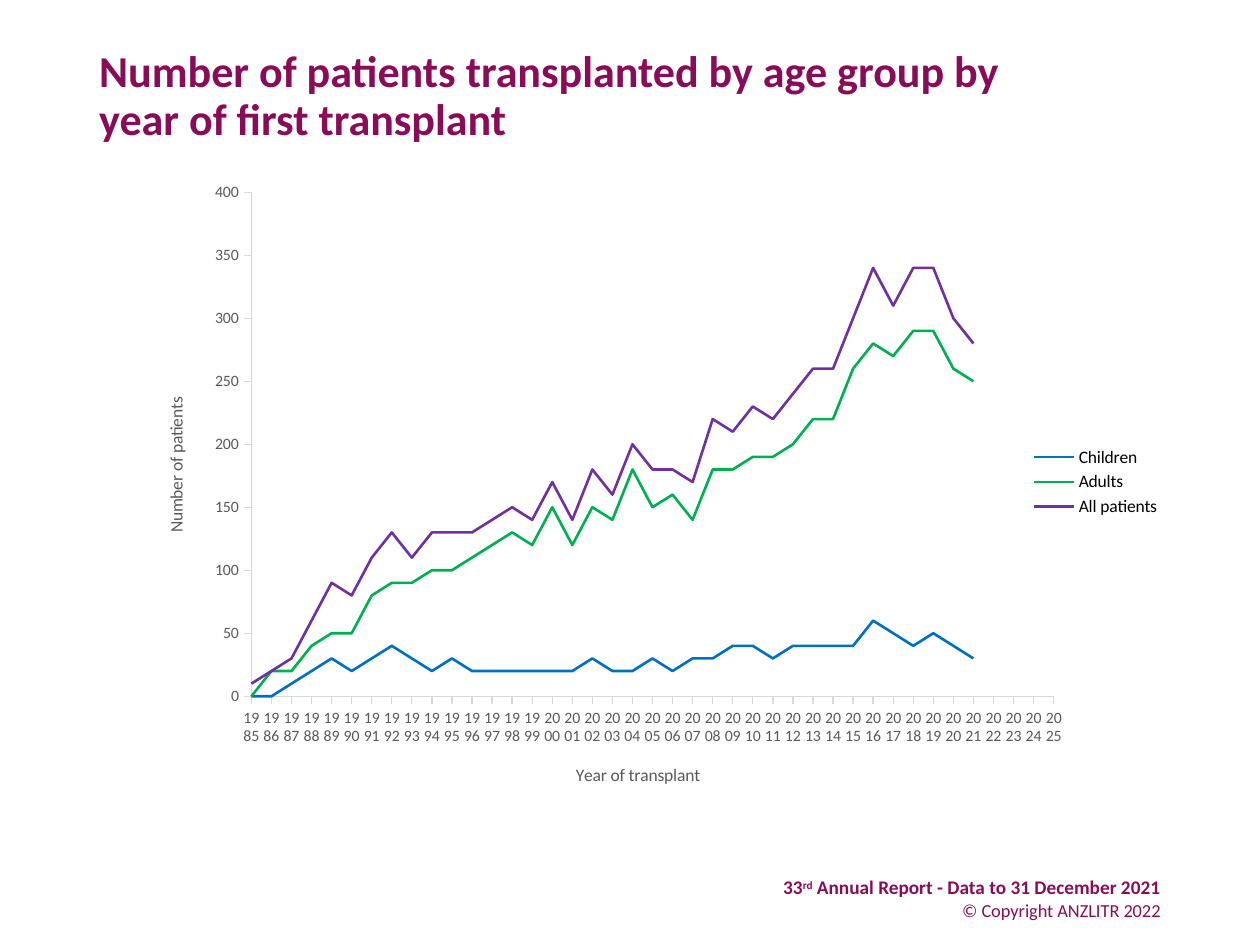
from dataclasses import dataclass
from typing import NamedTuple, Optional

from lxml.etree import SubElement
from pptx import Presentation
from pptx.chart.data import CategoryChartData
from pptx.dml.color import RGBColor as RGB
from pptx.enum.chart import XL_CHART_TYPE as ChartType
from pptx.enum.chart import XL_LEGEND_POSITION as LegendPos
from pptx.enum.chart import XL_TICK_MARK as Tick
from pptx.enum.text import MSO_ANCHOR as Anchor
from pptx.enum.text import PP_ALIGN as Align
from pptx.oxml.ns import qn
from pptx.util import Cm, Pt


@dataclass(frozen=True)
class Theme:
    font: str = "Calibri"
    plum: RGB = RGB.from_string("890C58")
    grey: RGB = RGB.from_string("595959")
    rule: RGB = RGB.from_string("D9D9D9")
    black: RGB = RGB.from_string("000000")
    title: float = 25.2
    report: float = 11
    copyright: float = 10.5
    label: float = 10
    tick: float = 9
    axis_width: float = 0.75
    line_width: float = 1.5


class Box(NamedTuple):
    left: float
    top: float
    width: float
    height: float

    def lengths(self) -> list:
        return [Cm(v) for v in self]


class Run(NamedTuple):
    text: str
    size: float
    bold: bool = False
    baseline: int = 0


class Series(NamedTuple):
    name: str
    color: str
    values: list


THEME = Theme()
YEARS = range(1985, 2026)
SERIES = [
    Series("Children", "0070C0", [
        0, 0, 10, 20, 30, 20, 30, 40, 30, 20, 30, 20, 20, 20, 20, 20, 20, 30, 20,
        20, 30, 20, 30, 30, 40, 40, 30, 40, 40, 40, 40, 60, 50, 40, 50, 40, 30]),
    Series("Adults", "00B050", [
        0, 20, 20, 40, 50, 50, 80, 90, 90, 100, 100, 110, 120, 130, 120, 150, 120,
        150, 140, 180, 150, 160, 140, 180, 180, 190, 190, 200, 220, 220, 260, 280,
        270, 290, 290, 260, 250]),
    Series("All patients", "7030A0", [
        10, 20, 30, 60, 90, 80, 110, 130, 110, 130, 130, 130, 140, 150, 140, 170,
        140, 180, 160, 200, 180, 180, 170, 220, 210, 230, 220, 240, 260, 260, 300,
        340, 310, 340, 340, 300, 280]),
]


def set_font(font, size: float, color: RGB, bold: bool = False) -> None:
    font.name = THEME.font
    font.size = Pt(size)
    font.bold = bold
    font.color.rgb = color


def add_text(slide, box: Box, paragraphs: list[list[Run]], *, align=Align.LEFT,
             anchor=Anchor.TOP, spacing: float = 1.0) -> None:
    tf = slide.shapes.add_textbox(*box.lengths()).text_frame
    tf.word_wrap = True
    tf.vertical_anchor = anchor
    for i, runs in enumerate(paragraphs):
        p = tf.add_paragraph() if i else tf.paragraphs[0]
        p.alignment = align
        p.line_spacing = spacing
        for run in runs:
            for j, line in enumerate(run.text.split("\n")):
                if j:
                    p.add_line_break()
                r = p.add_run()
                r.text = line
                set_font(r.font, run.size, THEME.plum, run.bold)
                if run.baseline:
                    r.font._element.set("baseline", str(run.baseline * 1000))


def set_layout(element, index: int, x: float, y: float,
               size: Optional[tuple[float, float]] = None) -> None:
    layout = element.find(qn("c:layout"))
    if layout is not None:
        element.remove(layout)
    layout = SubElement(element, qn("c:layout"))
    element.insert(index, layout)
    manual = SubElement(layout, qn("c:manualLayout"))
    settings = {"xMode": "edge", "yMode": "edge", "x": x, "y": y}
    if size:
        settings = {"layoutTarget": "inner", **settings, "w": size[0], "h": size[1]}
    for tag, value in settings.items():
        SubElement(manual, qn(f"c:{tag}")).set("val", str(value))


def style_axis(axis, title: str, x: float, y: float) -> None:
    axis.has_major_gridlines = False
    axis.major_tick_mark = Tick.OUTSIDE
    axis.minor_tick_mark = Tick.NONE
    axis.format.line.color.rgb = THEME.rule
    axis.format.line.width = Pt(THEME.axis_width)
    set_font(axis.tick_labels.font, THEME.tick, THEME.grey)
    p = axis.axis_title.text_frame.paragraphs[0]
    r = p.add_run()
    r.text = title
    set_font(r.font, THEME.label, THEME.grey)
    set_layout(axis.axis_title._element, 1, x, y)


def set_after(axis, previous: str, tag: str, value: str) -> None:
    element = axis._element
    child = element.find(qn(tag))
    if child is None:
        child = SubElement(element, qn(tag))
        element.find(qn(previous)).addnext(child)
    child.set("val", value)


def show_every_label(axis) -> None:
    body = axis._element.find(qn("c:txPr")).find(qn("a:bodyPr"))
    body.set("rot", "0")
    body.set("vert", "horz")
    set_after(axis, "c:lblOffset", "c:tickLblSkip", "1")


def add_line_chart(slide, box: Box, series: list[Series]) -> None:
    data = CategoryChartData()
    data.categories = [str(year) for year in YEARS]
    for s in series:
        data.add_series(s.name, s.values + [None] * (len(YEARS) - len(s.values)))
    chart = slide.shapes.add_chart(ChartType.LINE, *box.lengths(), data).chart
    chart.has_title = False
    set_font(chart.font, THEME.label, THEME.black)
    chart.has_legend = True
    chart.legend.position = LegendPos.RIGHT
    chart.legend.include_in_layout = True
    set_font(chart.legend.font, THEME.label, THEME.black)

    plot = chart.plots[0]
    plot.vary_by_categories = False
    for s, line in zip(series, plot.series):
        line.smooth = False
        line.format.line.color.rgb = RGB.from_string(s.color)
        line.format.line.width = Pt(THEME.line_width)

    style_axis(chart.category_axis, "Year of transplant", 0.432, 0.937)
    show_every_label(chart.category_axis)
    axis = chart.value_axis
    style_axis(axis, "Number of patients", 0.043, 0.362)
    set_after(axis, "c:crosses", "c:crossBetween", "midCat")
    axis.minimum_scale, axis.maximum_scale, axis.major_unit = 0, 400, 50
    plot_area = chart._chartSpace.chart.plotArea
    set_layout(plot_area, 0, 0.128, 0.045, (0.759, 0.792))


def main() -> None:
    prs = Presentation()
    prs.slide_width, prs.slide_height = Cm(25.4), Cm(19.05)
    slide = prs.slides.add_slide(prs.slide_layouts[6])
    add_text(slide, Box(14.96, 17.53, 8.69, 1.02), [
        [Run("33", THEME.report, True),
         Run("rd", THEME.report, True, 30),
         Run(" Annual Report - Data to 31 December 2021", THEME.report, True)],
        [Run("© Copyright ANZLITR 2022", THEME.copyright)],
    ], align=Align.RIGHT)
    title = "Number of patients transplanted by age group by\nyear of first transplant"
    add_text(slide, Box(1.75, 1.02, 21.89, 1.88), [[Run(title, THEME.title, True)]],
             anchor=Anchor.MIDDLE, spacing=0.9)
    add_line_chart(slide, Box(2.34, 3.3, 21.31, 12.83), SERIES)
    prs.save("out.pptx")


if __name__ == "__main__":
    main()
